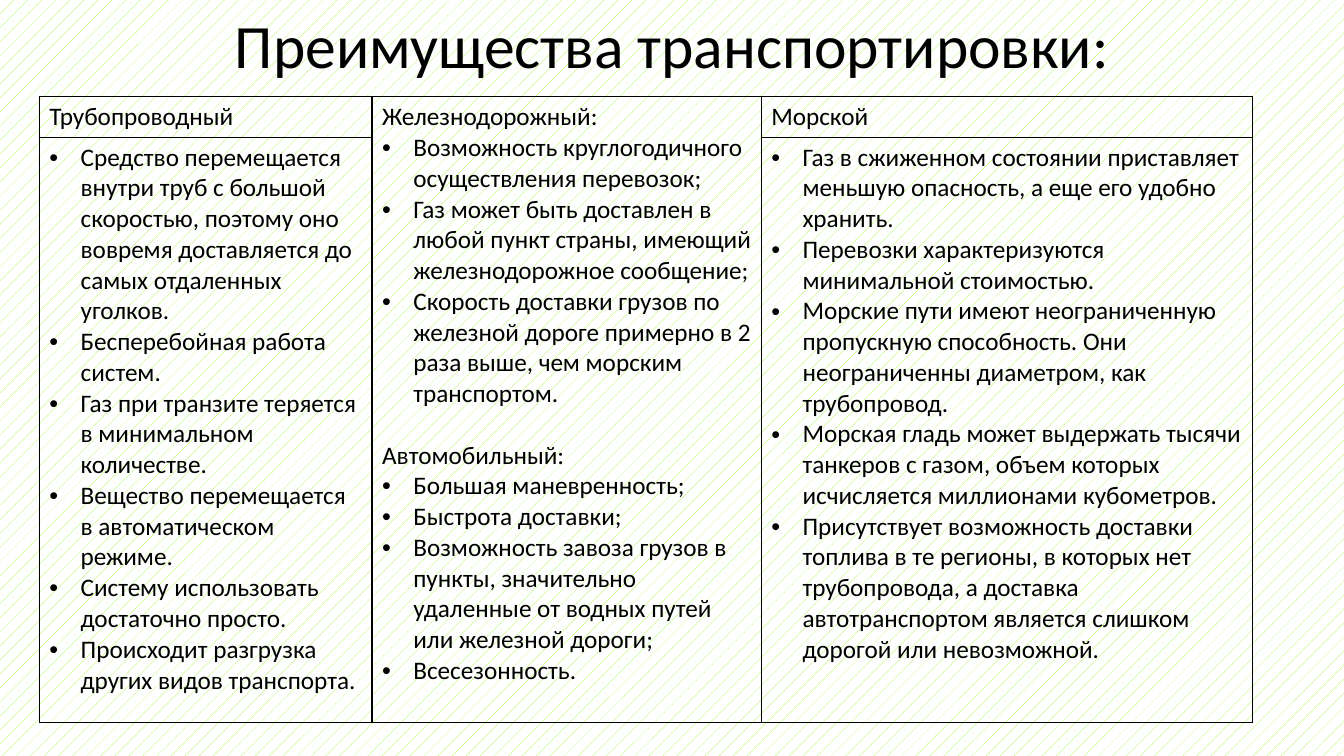
from lxml.etree import SubElement
from pptx import Presentation
from pptx.dml.color import RGBColor
from pptx.enum.dml import MSO_PATTERN
from pptx.enum.text import MSO_ANCHOR, PP_ALIGN
from pptx.oxml.ns import qn
from pptx.util import Inches, Pt

COLORS = {"text": "000000", "border": "000000", "hatch": "9AF927", "paper": "FFFFFF"}
FONT = "Calibri"
BODY_SIZE = 18
COLUMNS = [3.3, 3.86, 4.87]
ROWS = [0.37, 5.6]
INDENT = 0.31

# Cell contents: (row, column) -> blocks of (heading, bullets)
CELLS = {
    (0, 0): [("Трубопроводный", [])],
    (1, 0): [(None, [
        "Средство перемещается внутри труб с большой скоростью, поэтому оно "
        "вовремя доставляется до самых отдаленных уголков.",
        "Бесперебойная работа систем.",
        "Газ при транзите теряется в минимальном количестве.",
        "Вещество перемещается в автоматическом режиме.",
        "Систему использовать достаточно просто.",
        "Происходит разгрузка других видов транспорта.",
    ])],
    (0, 1): [
        ("Железнодорожный:", [
            "Возможность круглогодичного осуществления перевозок;",
            "Газ может быть доставлен в любой пункт страны, имеющий "
            "железнодорожное сообщение;",
            "Скорость доставки грузов по железной дороге примерно в 2 раза выше, "
            "чем морским транспортом.",
        ]),
        ("Автомобильный:", [
            "Большая маневренность;",
            "Быстрота доставки;",
            "Возможность завоза грузов в пункты, значительно удаленные от водных "
            "путей или железной дороги;",
            "Всесезонность.",
        ]),
    ],
    (0, 2): [("Морской", [])],
    (1, 2): [(None, [
        "Газ в сжиженном состоянии приставляет меньшую опасность, а еще его "
        "удобно хранить.",
        "Перевозки характеризуются минимальной стоимостью.",
        "Морские пути имеют неограниченную пропускную способность. Они "
        "неограниченны диаметром, как трубопровод.",
        "Морская гладь может выдержать тысячи танкеров с газом, объем которых "
        "исчисляется миллионами кубометров.",
        "Присутствует возможность доставки топлива в те регионы, в которых нет "
        "трубопровода, а доставка автотранспортом является слишком дорогой или "
        "невозможной.",
    ])],
}


def add_text(p, text, size):
    r = p.add_run()
    r.text = text
    r.font.size = Pt(size)
    r.font.name = FONT
    r.font.bold = False
    r.font.color.rgb = RGBColor.from_string(COLORS["text"])


def add_borders(cell):
    tcPr = cell._tc.get_or_add_tcPr()
    for i, side in enumerate(("lnL", "lnR", "lnT", "lnB")):
        ln = tcPr.makeelement(qn(f"a:{side}"), {"w": str(Pt(1))})
        fill = SubElement(ln, qn("a:solidFill"))
        SubElement(fill, qn("a:srgbClr"), val=COLORS["border"])
        tcPr.insert(i, ln)


prs = Presentation()
prs.slide_width = Inches(13.33)
prs.slide_height = Inches(7.5)
s = prs.slides.add_slide(prs.slide_layouts[6])

# Hatched background
bg = s.background.fill
bg.patterned()
bg.pattern = MSO_PATTERN.PERCENT_5
bg.fore_color.rgb = RGBColor.from_string(COLORS["hatch"])
bg.back_color.rgb = RGBColor.from_string(COLORS["paper"])

# Title
title = s.shapes.add_textbox(Inches(0.92), 0, Inches(11.5), Inches(0.96))
tf = title.text_frame
tf.word_wrap = True
tf.vertical_anchor = MSO_ANCHOR.MIDDLE
p = tf.paragraphs[0]
p.alignment = PP_ALIGN.CENTER
p.line_spacing = 0.9
add_text(p, "Преимущества транспортировки:", 44)

# Table grid
frame = s.shapes.add_table(len(ROWS), len(COLUMNS), Inches(0.39), Inches(0.96),
                           Inches(sum(COLUMNS)), Inches(sum(ROWS)))
table = frame.table
table.first_row = False
table.horz_banding = False
for column, width in zip(table.columns, COLUMNS):
    column.width = Inches(width)
for row, height in zip(table.rows, ROWS):
    row.height = Inches(height)
table.cell(0, 1).merge(table.cell(1, 1))
for cell in table.iter_cells():
    cell.fill.background()
    add_borders(cell)

# Headings and bullet lists
for (row, col), blocks in CELLS.items():
    tf = table.cell(row, col).text_frame
    lines = [(text, is_bullet) for heading, bullets in blocks
             for text, is_bullet in [(heading, False)] + [(b, True) for b in bullets]
             if text]
    for i, (text, is_bullet) in enumerate(lines):
        p = tf.add_paragraph() if i else tf.paragraphs[0]
        if is_bullet:
            pPr = p._p.get_or_add_pPr()
            pPr.set("marL", str(Inches(INDENT)))
            pPr.set("indent", str(-Inches(INDENT)))
            SubElement(pPr, qn("a:buFont"), typeface="Arial")
            SubElement(pPr, qn("a:buChar"), char="•")
        elif i:
            p.space_before = Pt(22)
        add_text(p, text, BODY_SIZE)

prs.save("out.pptx")
